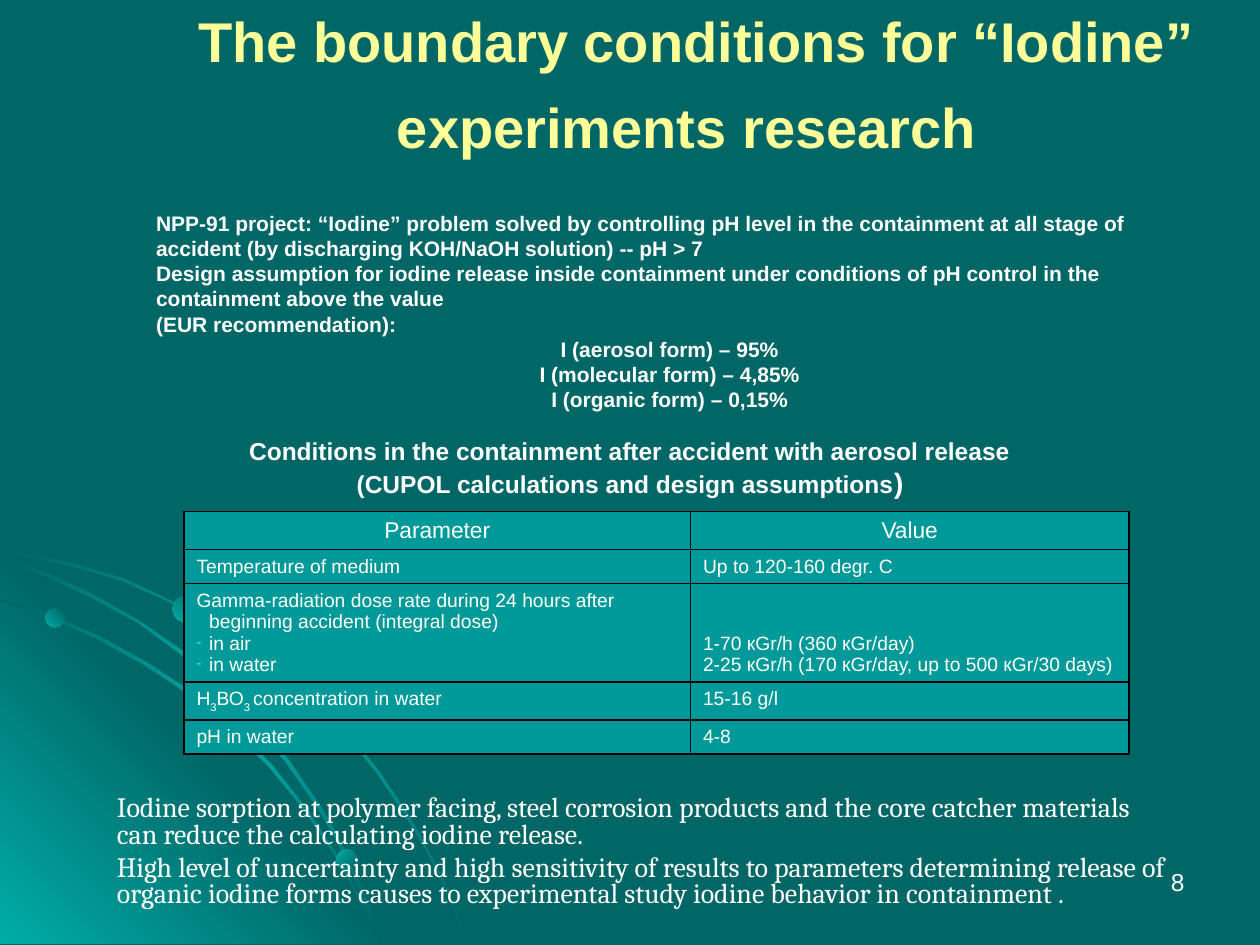
from dataclasses import dataclass

from lxml.etree import SubElement
from pptx import Presentation
from pptx.dml.color import RGBColor
from pptx.enum.shapes import MSO_SHAPE as Shape
from pptx.enum.text import MSO_ANCHOR as Anchor, PP_ALIGN as Align
from pptx.oxml.ns import qn
from pptx.util import Inches, Pt

# Grid of 1000 columns by 750 rows
CELL = Inches(0.01)
COLUMNS, ROWS = 1000, 750


@dataclass(frozen=True)
class Theme:
    back: str = "006666"
    glow: str = "00ACA8"
    cell: str = "009999"
    text: str = "FFFFFF"
    title: str = "FFFF99"
    bullet: str = "00FFFF"
    border: str = "000000"
    sans: str = "Arial"
    serif: str = "Cambria"
    title_size: int = 32
    title_gap: int = 41
    body: int = 16
    caption: int = 14
    header: int = 13
    note: int = 12
    small: int = 11


THEME = Theme()

# Outlines in grid units
STREAMS = [
    [(57, 447), (28, 441), (0, 435), (0, 438), (28, 443), (56, 449), (97, 461),
     (135, 478), (173, 499), (208, 523), (241, 549), (271, 579), (298, 612),
     (323, 649), (337, 673), (350, 698), (360, 723), (370, 749), (372, 749),
     (362, 723), (352, 698), (339, 673), (325, 648), (300, 611), (272, 578),
     (242, 548), (209, 521), (174, 497), (136, 477), (98, 459)],
    [(285, 714), (294, 732), (301, 749), (303, 749), (296, 730), (286, 712),
     (266, 676), (242, 640), (215, 606), (184, 576), (152, 549), (117, 526),
     (79, 505), (41, 488), (0, 475), (0, 477), (39, 490), (77, 507), (115, 528),
     (150, 551), (183, 578), (213, 608), (240, 641), (265, 677)],
    [(0, 442), (0, 444), (36, 457), (74, 475), (109, 494), (142, 518), (173, 544),
     (202, 575), (227, 605), (252, 641), (267, 667), (280, 694), (292, 722),
     (301, 749), (303, 749), (294, 720), (282, 693), (269, 665), (254, 639),
     (229, 603), (204, 573), (175, 543), (144, 516), (111, 493), (76, 473),
     (39, 455)],
]
CORNER = [(322, 749), (0, 749), (0, 427)]
DROPS = [(36, 483, 15, 315), (267, 674, 16, 45), (137, 473, 21, 315)]

PROJECT = [
    "NPP-91 project: “Iodine” problem solved by controlling pH level in the "
    "containment at all stage of accident (by discharging KOH/NaOH solution) -- рН > 7",
    "Design assumption for iodine release inside containment under conditions of pH "
    "control in the containment above the value",
    "(EUR recommendation):",
]
FORMS = ["I (aerosol form) – 95%", "I (molecular form) – 4,85%", "I (organic form) – 0,15%"]
CONCLUSIONS = [
    "Iodine sorption at polymer facing, steel corrosion products and the core catcher "
    "materials can reduce the calculating iodine release.",
    "High level of uncertainty and high sensitivity of results to parameters determining "
    "release of organic iodine forms causes to experimental study iodine behavior in "
    "containment .",
]
# Each cell is a list of paragraphs; "_" surrounds subscripts
CONDITIONS = [
    (["Parameter"], ["Value"]),
    (["Temperature of medium"], ["Up to 120-160 degr. С"]),
    (["Gamma-radiation dose rate during 24 hours after beginning accident (integral dose)",
      "in air", "in water"],
     ["1-70 кGr/h (360 кGr/day)", "2-25 кGr/h (170 кGr/day, up to 500 кGr/30 days)"]),
    (["Н_3_ВО_3 _concentration in water"], ["15-16 g/l"]),
    (["рН in water"], ["4-8"]),
]
COLUMN_WIDTHS = [402, 348]
ROW_HEIGHTS = [28, 27, 78, 27, 27]


def grid(*cells):
    return [count * CELL for count in cells]


def color(value):
    return RGBColor.from_string(value)


def add_span(para, text, size, ink=THEME.text, face=THEME.sans, bold=False):
    span = para.add_run()
    span.text = text
    font = span.font
    font.size, font.name, font.bold = Pt(size), face, bold
    font.color.rgb = color(ink)
    return span


def next_para(frame, index, align=Align.LEFT):
    para = frame.add_paragraph() if index else frame.paragraphs[0]
    para.alignment = align
    return para


def add_box(page, *place):
    frame = page.shapes.add_textbox(*grid(*place)).text_frame
    frame.word_wrap = True
    return frame


def paint_gradient(shape, colors, angle):
    """Spread the colors evenly; the angle runs clockwise."""
    shape.shadow.inherit = False
    shape.line.fill.background()
    shape.fill.gradient()
    shape.fill.gradient_angle = (360 - angle) % 360
    stops = shape._element.spPr.find(qn("a:gradFill")).find(qn("a:gsLst"))
    for stop in list(stops):
        stops.remove(stop)
    for index, value in enumerate(colors):
        position = 100000 * index // (len(colors) - 1)
        stop = SubElement(stops, qn("a:gs"), pos=str(position))
        SubElement(stop, qn("a:srgbClr"), val=value)


def add_outline(page, points, colors, angle):
    builder = page.shapes.build_freeform(*points[0], scale=CELL)
    builder.add_line_segments(points[1:], close=True)
    paint_gradient(builder.convert_to_shape(), colors, angle)


def add_backdrop(page):
    page.background.fill.solid()
    page.background.fill.fore_color.rgb = color(THEME.back)
    dark, glow = THEME.back, THEME.glow
    add_outline(page, STREAMS[0], [dark, glow, dark], 45)
    add_outline(page, CORNER, [glow, dark, glow], 315)
    for stream in STREAMS[1:]:
        add_outline(page, stream, [dark, glow, dark], 45)
    for left, top, size, angle in DROPS:
        drop = page.shapes.add_shape(Shape.OVAL, *grid(left, top, size, size))
        paint_gradient(drop, [glow, dark], angle)


def indent(para, cells, bullet=False):
    props = para._p.get_or_add_pPr()
    props.set("marL", str(cells * CELL))
    props.set("indent", str(-cells * CELL))
    if bullet:
        tint = SubElement(props, qn("a:buClr"))
        SubElement(tint, qn("a:srgbClr"), val=THEME.bullet)
        SubElement(props, qn("a:buSzPct"), val="75000")
        SubElement(props, qn("a:buChar"), char="-")


def style_cell(cell):
    props = cell._tc.get_or_add_tcPr()
    for side in ("lnL", "lnR", "lnT", "lnB"):
        line = SubElement(props, qn(f"a:{side}"), w=str(Pt(1)))
        fill = SubElement(line, qn("a:solidFill"))
        SubElement(fill, qn("a:srgbClr"), val=THEME.border)
    cell.fill.solid()
    cell.fill.fore_color.rgb = color(THEME.cell)


def fill_cell(cell, lines, header, listed):
    style_cell(cell)
    size = THEME.header if header else THEME.small
    for index, line in enumerate(lines):
        para = next_para(cell.text_frame, index, Align.CENTER if header else Align.LEFT)
        indent(para, 10 if listed else 37, bullet=listed and index > 0)
        for part, text in enumerate(line.split("_")):
            span = add_span(para, text, size)
            if part % 2:
                span.font._element.set("baseline", "-30000")


def add_conditions(page):
    place = grid(146, 406, sum(COLUMN_WIDTHS), sum(ROW_HEIGHTS))
    table = page.shapes.add_table(len(ROW_HEIGHTS), len(COLUMN_WIDTHS), *place).table
    for column, width in zip(table.columns, COLUMN_WIDTHS):
        column.width = width * CELL
    for row, height in zip(table.rows, ROW_HEIGHTS):
        row.height = height * CELL
    for r, row in enumerate(CONDITIONS):
        for c, lines in enumerate(row):
            fill_cell(table.cell(r, c), lines, header=r == 0, listed=len(lines) > 2)
    # Dose values line up with the last two lines beside them
    table.cell(2, 1).vertical_anchor = Anchor.BOTTOM


def add_title(page):
    frame = add_box(page, 106, 36, 894, 50)
    frame.vertical_anchor = Anchor.MIDDLE
    para = next_para(frame, 0, Align.CENTER)
    for text in ("The boundary conditions for “Iodine”", "experiments research"):
        add_span(para, text, THEME.title_size, THEME.title, bold=True)
        add_span(para, " ", THEME.title_gap, THEME.title)


def add_texts(page):
    # Page number
    para = next_para(add_box(page, 717, 683, 233, 50), 0, Align.RIGHT)
    add_span(para, "8", THEME.caption)
    # Conclusions
    frame = add_box(page, 83, 627, 858, 123)
    for index, text in enumerate(CONCLUSIONS):
        para = next_para(frame, index)
        para.line_spacing = 0.8
        para.space_before = Pt(3.2 if index else 0)
        add_span(para, text, THEME.body, face=THEME.serif)
    # Project assumptions
    frame = add_box(page, 114, 162, 835, 170)
    for index, text in enumerate(PROJECT + FORMS):
        align = Align.CENTER if text in FORMS else Align.LEFT
        add_span(next_para(frame, index, align), text, THEME.note, bold=True)
    # Table caption
    frame = add_box(page, 177, 341, 646, 60)
    para = next_para(frame, 0, Align.CENTER)
    add_span(para, "Conditions in the containment after accident with aerosol release",
             THEME.caption, bold=True)
    para = next_para(frame, 1, Align.CENTER)
    add_span(para, "(CUPOL calculations and design assumptions", THEME.caption, bold=True)
    add_span(para, ")", THEME.body, bold=True)


def main():
    deck = Presentation()
    deck.slide_width, deck.slide_height = grid(COLUMNS, ROWS)
    page = deck.slides.add_slide(deck.slide_layouts[6])
    add_backdrop(page)
    add_conditions(page)
    add_texts(page)
    add_title(page)
    deck.save("out.pptx")


if __name__ == "__main__":
    main()
